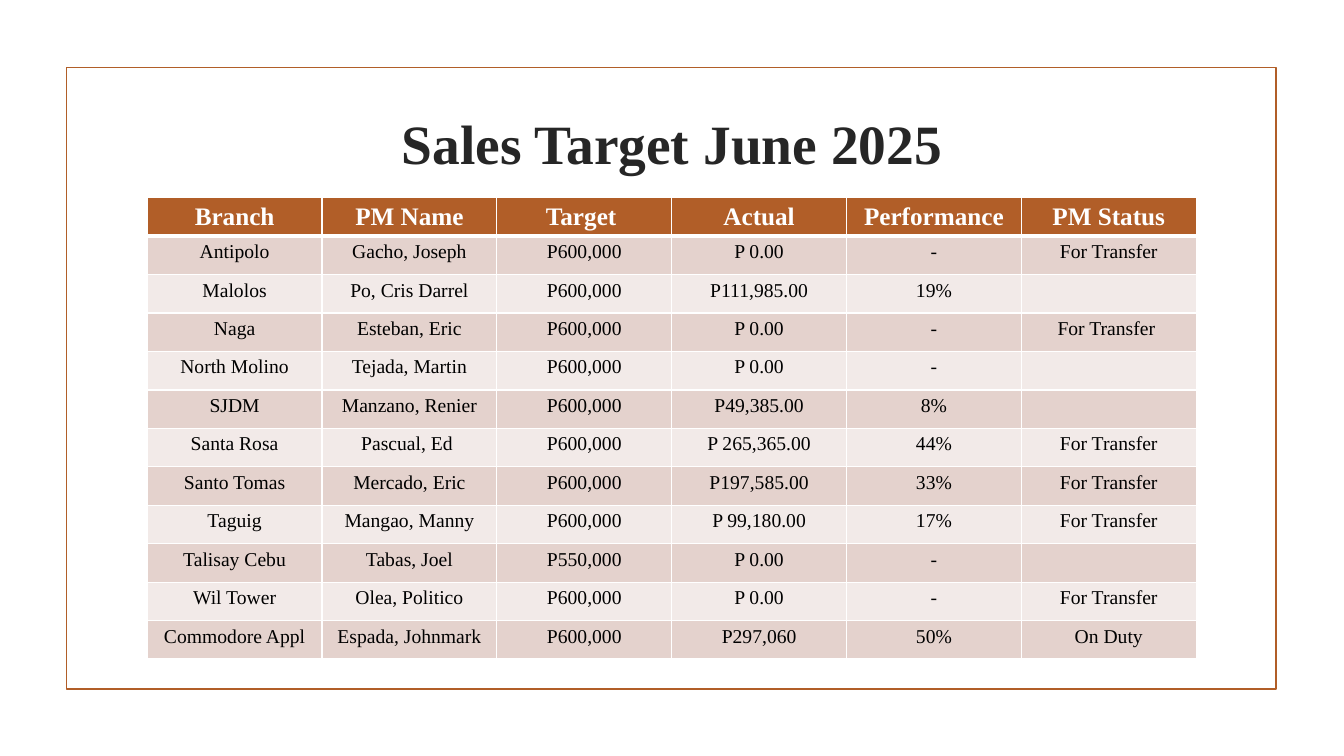
from pptx import Presentation
from pptx.dml.color import RGBColor
from pptx.enum.shapes import MSO_SHAPE as Shape
from pptx.enum.text import MSO_ANCHOR as Anchor, PP_ALIGN as Align
from pptx.oxml import parse_xml
from pptx.oxml.ns import nsdecls
from pptx.util import Cm, Pt

FONT = "Times New Roman"
RUST = RGBColor(0xB1, 0x5E, 0x28)
ROSE = RGBColor(0xE4, 0xD2, 0xCD)
PALE = RGBColor(0xF2, 0xEA, 0xE8)
DARK = RGBColor(0x26, 0x26, 0x26)
BLACK = RGBColor(0, 0, 0)
WHITE = RGBColor(0xFF, 0xFF, 0xFF)

HEADS = ["Branch", "PM Name", "Target ", "Actual", "Performance", "PM Status"]
SALES = [
    ["Antipolo", "Gacho, Joseph", "P600,000", "P 0.00", "-", "For Transfer"],
    ["Malolos", "Po, Cris Darrel", "P600,000", "P111,985.00", "19%", ""],
    ["Naga", "Esteban, Eric", "P600,000", "P 0.00", "-", "For Transfer "],
    ["North Molino", "Tejada, Martin", "P600,000", "P 0.00", "-", ""],
    ["SJDM", "Manzano, Renier", "P600,000", "P49,385.00", "8%", ""],
    ["Santa Rosa", "Pascual, Ed ", "P600,000", "P 265,365.00", "44%", "For Transfer"],
    ["Santo Tomas", "Mercado, Eric", "P600,000", "P197,585.00", "33%", "For Transfer"],
    ["Taguig", "Mangao, Manny", "P600,000", "P 99,180.00", "17%", "For Transfer"],
    ["Talisay Cebu", "Tabas, Joel", "P550,000", "P 0.00", "-", ""],
    ["Wil Tower", "Olea, Politico", "P600,000", "P 0.00", "-", "For Transfer"],
    ["Commodore Appl", "Espada, Johnmark", "P600,000", "P297,060", "50%", "On Duty"],
]


def write(frame, text, size=14, color=BLACK, bold=False):
    par = frame.paragraphs[0]
    par.alignment = Align.CENTER
    run = par.add_run()
    run.text = text
    font = run.font
    font.name, font.size, font.bold = FONT, Pt(size), bold
    font.color.rgb = color


def add_frame(slide):
    box = slide.shapes.add_shape(
        Shape.RECTANGLE, Cm(1.68), Cm(1.7), Cm(30.48), Cm(15.67))
    box.shadow.inherit = False
    box.fill.background()
    box.line.color.rgb = RUST
    box.line.width = Pt(1.25)


def add_title(slide, text):
    title = slide.shapes.title
    title.left, title.top = Cm(3.6), Cm(2.72)
    title.width, title.height = Cm(26.67), Cm(1.73)
    title.text_frame.vertical_anchor = Anchor.MIDDLE
    write(title.text_frame, text, size=39.6, color=DARK, bold=True)


def set_edges(cell, **widths):
    props = cell._tc.get_or_add_tcPr()
    for side, width in widths.items():
        props.append(parse_xml(
            f'<a:ln{side} {nsdecls("a")} w="{Pt(width)}"><a:solidFill>'
            f'<a:srgbClr val="{WHITE}"/></a:solidFill></a:ln{side}>'))


def fill_cell(cell, text, fill, top=1, low=1, **style):
    set_edges(cell, L=1, R=1, T=top, B=low)
    cell.fill.solid()
    cell.fill.fore_color.rgb = fill
    if text:
        write(cell.text_frame, text, **style)
    else:
        # Keep blank cells from stretching the row
        cell.margin_top = cell.margin_bottom = 0


def add_sales(slide):
    count = len(SALES) + 1
    table = slide.shapes.add_table(
        count, len(HEADS), Cm(3.71), Cm(4.98), Cm(26.44), Cm(11.63)).table

    # Header row
    for col, text in enumerate(HEADS):
        fill_cell(table.cell(0, col), text, RUST, low=3,
                  size=18, color=WHITE, bold=True)

    # Branch rows in alternating bands
    for row, values in enumerate(SALES, 1):
        for col, text in enumerate(values):
            fill_cell(table.cell(row, col), text, ROSE if row % 2 else PALE,
                      top=3 if row == 1 else 1)


def main():
    deck = Presentation()
    deck.slide_width, deck.slide_height = Cm(33.87), Cm(19.05)
    slide = deck.slides.add_slide(deck.slide_layouts[5])
    add_frame(slide)
    add_title(slide, "Sales Target June 2025")
    add_sales(slide)
    deck.save("out.pptx")


if __name__ == "__main__":
    main()
